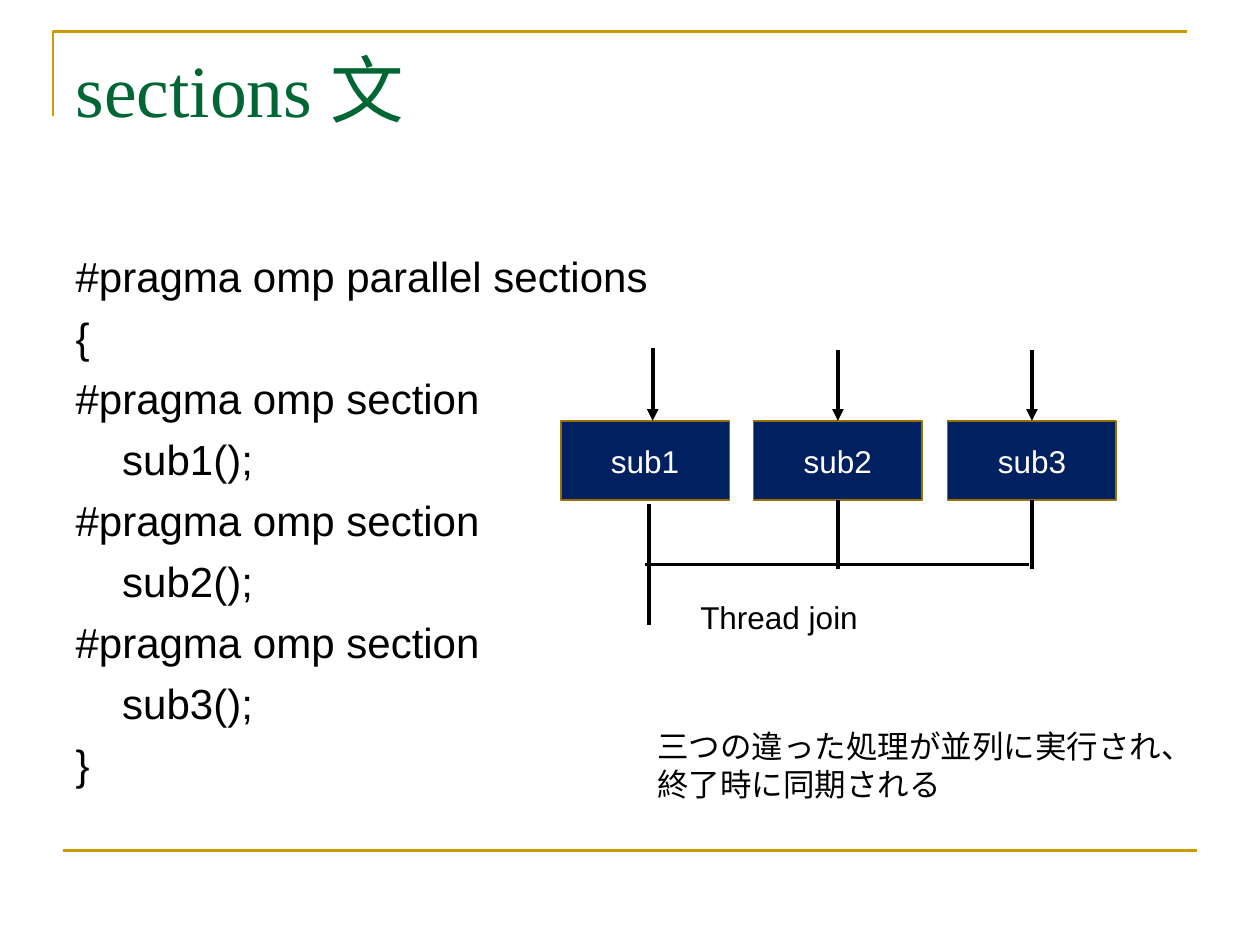
"""Build the slide on the OpenMP sections construct."""
import pptx
import pptx.dml.color
import pptx.enum.shapes
import pptx.enum.text
import pptx.oxml
import pptx.oxml.ns
import pptx.util
from pptx.util import Inches

COLORS = {"gold": "CC9900", "green": "006633", "black": "000000",
          "navy": "002060", "bronze": "977100", "white": "FFFFFF"}
LEFT = pptx.enum.text.PP_ALIGN.LEFT
CENTER = pptx.enum.text.PP_ALIGN.CENTER
TOP = pptx.enum.text.MSO_ANCHOR.TOP
MIDDLE = pptx.enum.text.MSO_ANCHOR.MIDDLE
FIXED = pptx.enum.text.MSO_AUTO_SIZE.NONE
CODE = [("#pragma omp parallel sections", 0), ("{", 0),
        ("#pragma omp section", 0), ("sub1();", 0.37),
        ("#pragma omp section", 0), ("sub2();", 0.37),
        ("#pragma omp section", 0), ("sub3();", 0.37), ("}", 0)]


def color(name):
    return pptx.dml.color.RGBColor.from_string(COLORS[name])


def apply(target, values):
    for name, value in values.items():
        setattr(target, name, value)


def place(shape, left, top, width, height):
    apply(shape, {"left": Inches(left), "top": Inches(top),
                  "width": Inches(width), "height": Inches(height)})


def write(shape, lines, size, ink, font="Arial", align=LEFT, anchor=TOP, wrap=True):
    frame = shape.text_frame
    apply(frame, {"text": "\n".join(lines), "word_wrap": wrap,
                  "auto_size": FIXED, "vertical_anchor": anchor})
    for para in frame.paragraphs:
        para.alignment = align
        for span in para.runs:
            apply(span.font, {"name": font, "size": pptx.util.Pt(size)})
            span.font.color.rgb = color(ink)


def style_line(shape, ink, width):
    shape.line.color.rgb = color(ink)
    shape.line.width = pptx.util.Pt(width)


def add_line(page, start, end, ink="black", width=2.25, arrow=False):
    line = page.shapes.add_connector(
        pptx.enum.shapes.MSO_CONNECTOR.STRAIGHT, *map(Inches, start + end))
    style_line(line, ink, width)
    if arrow:
        tail = pptx.oxml.parse_xml(
            f'<a:tailEnd {pptx.oxml.ns.nsdecls("a")} type="triangle"/>')
        line.line._get_or_add_ln().append(tail)
    line._element.spPr.append(
        pptx.oxml.parse_xml(f'<a:effectLst {pptx.oxml.ns.nsdecls("a")}/>'))
    return line


def add_frame(page):
    builder = page.shapes.build_freeform(Inches(0.42), Inches(0.92))
    corner = [(Inches(0.42), Inches(0.25)), (Inches(9.42), Inches(0.25))]
    builder.add_line_segments(corner, close=False)
    outline = builder.convert_to_shape()
    outline.fill.background()
    outline.shadow.inherit = False
    style_line(outline, "gold", 1.5)
    add_line(page, (0.5, 6.75), (9.5, 6.75), "gold", 1.5)


def add_code(body):
    place(body, 0.5, 1.94, 5.05, 4.41)
    write(body, [text for text, _ in CODE], 24, "black")
    for para, (_, margin) in zip(body.text_frame.paragraphs, CODE):
        para.space_before = pptx.util.Pt(6)
        properties = para._p.get_or_add_pPr()
        properties.set("marL", str(Inches(margin)))
        properties.set("indent", "0")
        properties.append(pptx.oxml.parse_xml(
            f'<a:buNone {pptx.oxml.ns.nsdecls("a")}/>'))


def add_task(page, label, left):
    box = page.shapes.add_shape(
        pptx.enum.shapes.MSO_SHAPE.RECTANGLE,
        *map(Inches, (left, 3.34, 1.34, 0.63)))
    box.shadow.inherit = False
    box.fill.solid()
    box.fill.fore_color.rgb = color("navy")
    style_line(box, "bronze", 1)
    write(box, [label], 18, "white", align=CENTER, anchor=MIDDLE)
    return box


def add_label(page, area, lines, wrap):
    box = page.shapes.add_textbox(*map(Inches, area))
    write(box, lines, 18, "black", wrap=wrap)


def add_threads(page):
    lefts = [4.45, 5.98, 7.52]
    boxes = [add_task(page, f"sub{number}", left)
             for number, left in enumerate(lefts, 1)]
    add_line(page, (5.18, 2.76), (5.18, 3.34), arrow=True)
    add_line(page, (5.15, 4), (5.15, 4.96))
    for box, left in zip(boxes[1:], lefts[1:]):
        middle = left + 0.67
        fork = add_line(page, (middle, 2.78), (middle, 3.34), arrow=True)
        fork.end_connect(box, 0)
        join = add_line(page, (middle, 3.97), (middle, 4.52))
        join.begin_connect(box, 2)
    add_line(page, (8.17, 4.48), (5.12, 4.48))


def main():
    deck = pptx.Presentation()
    apply(deck, {"slide_width": Inches(10), "slide_height": Inches(7.5)})
    page = deck.slides.add_slide(deck.slide_layouts[1])
    add_frame(page)
    title, body = page.placeholders
    place(title, 0.5, 0.3, 9, 1.25)
    write(title, ["sections 文"], 42, "green", font="Times New Roman")
    add_code(body)
    add_threads(page)
    add_label(page, (5.46, 4.7, 1.46, 0.4), ["Thread join"], False)
    add_label(page, (5.12, 5.72, 4.26, 0.71),
              ["三つの違った処理が並列に実行され、", "終了時に同期される"], True)
    deck.save("out.pptx")


if __name__ == "__main__":
    main()
